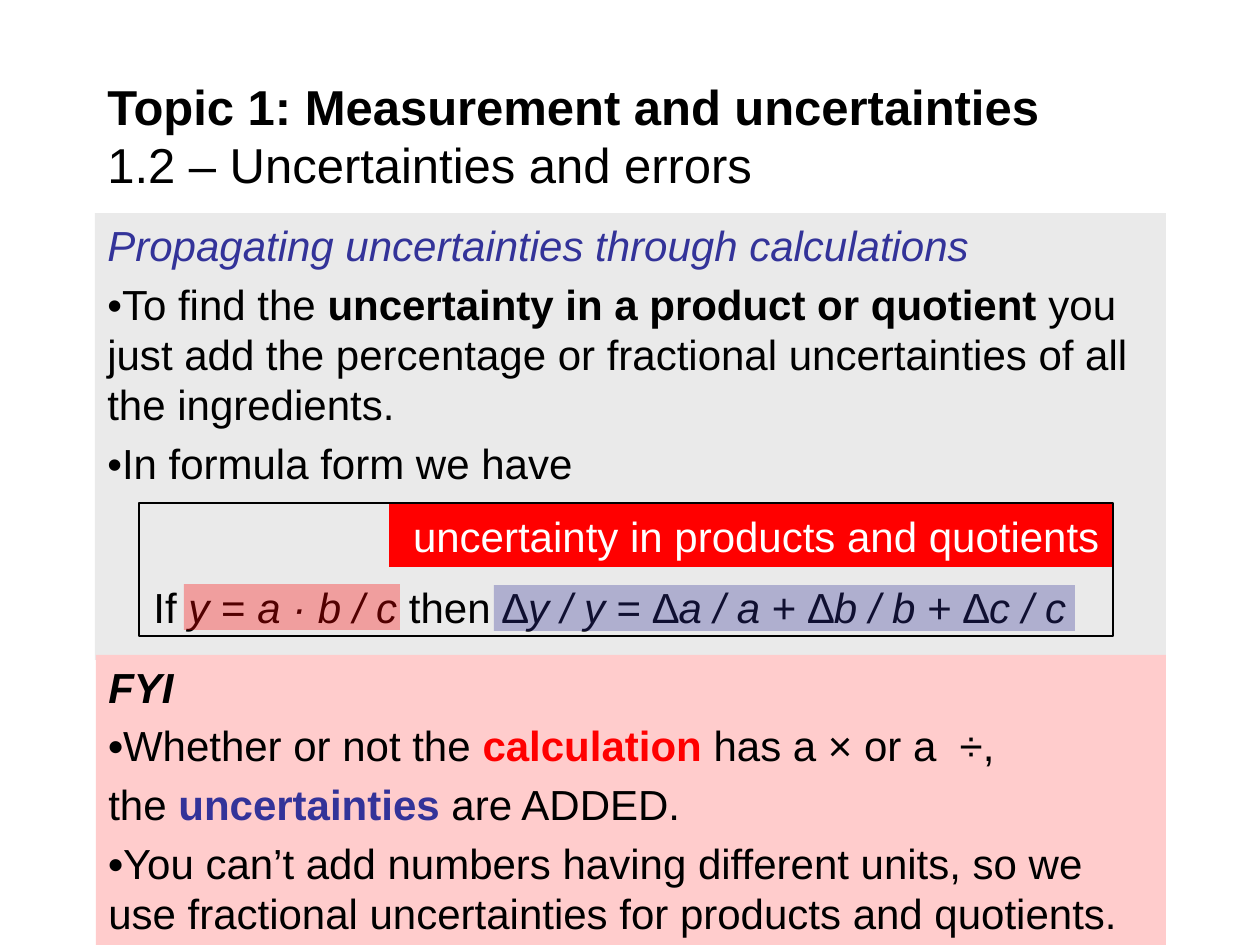
"""Build the slide on propagating uncertainties through products and quotients."""
from dataclasses import dataclass

import pptx
import pptx.dml.color
import pptx.enum.shapes
import pptx.enum.text
import pptx.oxml
import pptx.oxml.ns
import pptx.util

EMU_PER_PX = 914400 / 126
BLACK, WHITE, RED, BLUE = "000000", "FFFFFF", "FF0000", "333399"
GREY, PINK = "EAEAEA", "FFCCCC"
HIGHLIGHT_ALPHA = 32


@dataclass(frozen=True)
class Span:
    text: str
    color: str = BLACK
    bold: bool = False
    italic: bool = False
    size: int = 24


@dataclass(frozen=True)
class Area:
    left: int
    top: int
    width: int
    height: int


@dataclass(frozen=True)
class Panel:
    area: Area
    fill: str
    lines: list[list[Span]]


@dataclass(frozen=True)
class Highlight:
    area: Area
    color: str


def px(length: int) -> int:
    return round(length * EMU_PER_PX)


def rgb(color: str) -> pptx.dml.color.RGBColor:
    return pptx.dml.color.RGBColor.from_string(color)


def bounds(area: Area) -> tuple[int, ...]:
    return tuple(px(n) for n in (area.left, area.top, area.width, area.height))


def add_span(para, span: Span) -> None:
    run = para.add_run()
    run.text = span.text
    run.font.name = "Arial"
    run.font.size = pptx.util.Pt(span.size)
    run.font.bold = span.bold
    run.font.italic = span.italic
    run.font.color.rgb = rgb(span.color)


def write_lines(box, lines: list[list[Span]], space: float = 4.8,
                spacing: float = 1.0, wrap: bool = True) -> None:
    frame = box.text_frame
    frame.word_wrap = wrap
    frame.vertical_anchor = pptx.enum.text.MSO_ANCHOR.TOP
    for index, spans in enumerate(lines):
        para = frame.add_paragraph() if index else frame.paragraphs[0]
        para.alignment = pptx.enum.text.PP_ALIGN.LEFT
        para.space_before = pptx.util.Pt(space)
        para.line_spacing = spacing
        for span in spans:
            add_span(para, span)


def add_rectangle(page, area: Area, fill: str | None = None, line: str | None = None):
    box = page.shapes.add_shape(pptx.enum.shapes.MSO_SHAPE.RECTANGLE, *bounds(area))
    box.shadow.inherit = False
    if fill:
        box.fill.solid()
        box.fill.fore_color.rgb = rgb(fill)
    else:
        box.fill.background()
    if line:
        box.line.color.rgb = rgb(line)
        box.line.width = pptx.util.Pt(1)
    else:
        box.line.fill.background()
    return box


def add_panel(page, panel: Panel) -> None:
    write_lines(add_rectangle(page, panel.area, panel.fill), panel.lines)


def add_highlight(page, highlight: Highlight) -> None:
    box = add_rectangle(page, highlight.area, highlight.color)
    color = box.fill._xPr.find(".//" + pptx.oxml.ns.qn("a:srgbClr"))
    alpha = pptx.oxml.parse_xml(f'<a:alpha {pptx.oxml.ns.nsdecls("a")} val="{HIGHLIGHT_ALPHA * 1000}"/>')
    color.append(alpha)


def add_title(page, area: Area, topic: str, section: str) -> None:
    box = page.shapes.add_textbox(*bounds(area))
    box.text_frame.word_wrap = True
    box.text_frame.vertical_anchor = pptx.enum.text.MSO_ANCHOR.MIDDLE
    para = box.text_frame.paragraphs[0]
    add_span(para, Span(topic, bold=True, size=28))
    para.add_line_break()
    add_span(para, Span(section, size=28))


def add_formula(page) -> None:
    parts = ["If ", "y", " = ", "a · b / c", " then ∆", "y / y", " = ∆",
             "a / a", " + ∆", "b / b ", "+ ∆", "c / c"]
    spans = [Span(text, italic=index % 2 == 1) for index, text in enumerate(parts)]
    box = page.shapes.add_textbox(*bounds(Area(141, 581, 977, 45)))
    write_lines(box, [spans], spacing=0.9)
    label = add_rectangle(page, Area(389, 504, 723, 63), RED)
    write_lines(label, [[Span(" uncertainty in products and quotients", WHITE)]],
                space=0, wrap=False)
    add_rectangle(page, Area(139, 503, 974, 133), line=BLACK)


RULE = Panel(Area(95, 213, 1071, 447), GREY, [
    [Span("Propagating uncertainties through calculations", BLUE, italic=True)],
    [Span("•To find the "),
     Span("uncertainty in a product or quotient", bold=True),
     Span(" you just add the percentage or fractional uncertainties of all the ingredients.")],
    [Span("•In formula form we have")],
])
FYI = Panel(Area(96, 655, 1070, 290), PINK, [
    [Span("FYI", bold=True, italic=True)],
    [Span("•", bold=True), Span("Whether or not the "),
     Span("calculation", RED, bold=True), Span(" has a × or a  ÷,")],
    [Span("the "), Span("uncertainties", BLUE, bold=True), Span(" are ADDED.")],
    [Span("•", bold=True),
     Span("You can’t add numbers having different units, so we use fractional "
          "uncertainties for products and quotients.")],
])
HIGHLIGHTS = [
    Highlight(Area(184, 584, 216, 46), RED),
    Highlight(Area(494, 585, 581, 46), BLUE),
]


def main() -> None:
    deck = pptx.Presentation()
    deck.slide_width, deck.slide_height = px(1260), px(945)
    page = deck.slides.add_slide(deck.slide_layouts[6])
    add_panel(page, RULE)
    add_title(page, Area(95, 73, 1071, 124),
              "Topic 1: Measurement and uncertainties", "1.2 – Uncertainties and errors")
    add_formula(page)
    add_panel(page, FYI)
    for highlight in HIGHLIGHTS:
        add_highlight(page, highlight)
    deck.save("out.pptx")


if __name__ == "__main__":
    main()
